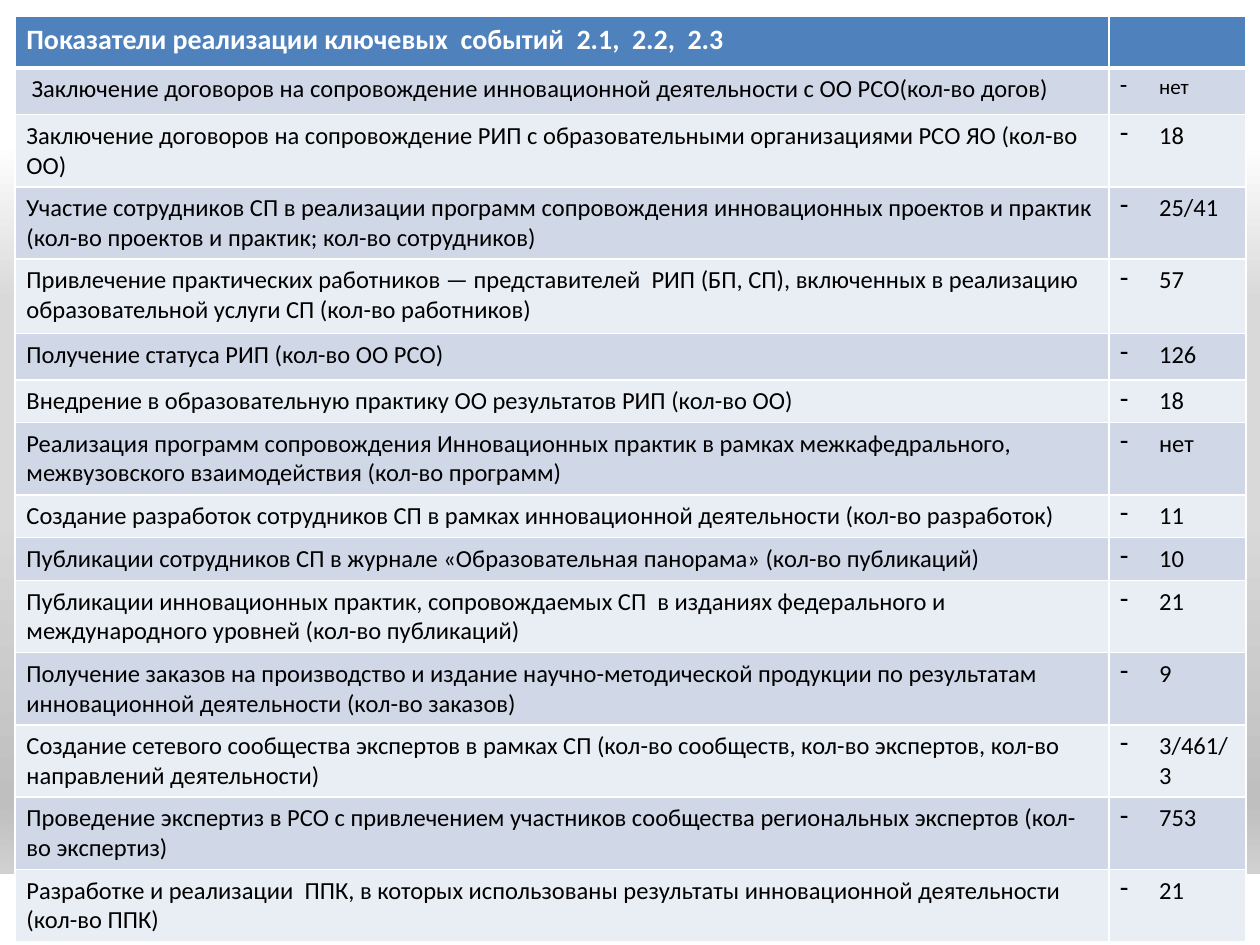
from pptx import Presentation
from pptx.dml.color import RGBColor
from pptx.enum.shapes import MSO_SHAPE
from pptx.oxml.ns import qn
from pptx.util import Inches, Pt
from lxml.etree import SubElement

WIDTH, HEIGHT = Inches(10), Inches(7.5)
COLUMN_WIDTHS = [8.68, 1.09]
HEADER_HEIGHT = 0.41
BAND_FILLS = ["D0D8E8", "E9EDF4"]
HEADING = "Показатели реализации ключевых  событий  2.1,  2.2,  2.3"
BACKDROP = [(0, "FFFFFF"), (15, "FFFFFF"), (32, "D9D9D9"),
            (54, "D9D9D9"), (85, "BFBFBF"), (100, "E6E6E6")]
INDICATORS = [
    (0.37, "Заключение договоров на сопровождение инновационной деятельности с ОО РСО(кол-во догов)", "нет"),
    (0.56, "Заключение договоров на сопровождение РИП с образовательными организациями РСО ЯО (кол-во ОО)", "18"),
    (0.56, "Участие сотрудников СП в реализации программ сопровождения инновационных проектов и практик "
           "(кол-во проектов и практик; кол-во сотрудников)", "25/41"),
    (0.59, "Привлечение практических работников — представителей  РИП (БП, СП), включенных в реализацию "
           "образовательной услуги СП (кол-во работников)", "57"),
    (0.37, "Получение статуса РИП (кол-во ОО РСО)", "126"),
    (0.33, "Внедрение в образовательную практику ОО результатов РИП (кол-во ОО)", "18"),
    (0.56, "Реализация программ сопровождения Инновационных практик в рамках межкафедрального, "
           "межвузовского взаимодействия (кол-во программ)", "нет"),
    (0.34, "Создание разработок сотрудников СП в рамках инновационной деятельности (кол-во разработок)", "11"),
    (0.34, "Публикации сотрудников СП в журнале «Образовательная панорама» (кол-во публикаций)", "10"),
    (0.56, "Публикации инновационных практик, сопровождаемых СП  в изданиях федерального и "
           "международного уровней (кол-во публикаций)", "21"),
    (0.56, "Получение заказов на производство и издание научно-методической продукции по результатам "
           "инновационной деятельности (кол-во заказов)", "9"),
    (0.56, "Создание сетевого сообщества экспертов в рамках СП (кол-во сообществ, кол-во экспертов, "
           "кол-во направлений деятельности)", "3/461/3"),
    (0.56, "Проведение экспертиз в РСО с привлечением участников сообщества региональных экспертов "
           "(кол-во экспертиз)", "753"),
    (0.56, "Разработке и реализации  ППК, в которых использованы результаты инновационной деятельности "
           "(кол-во ППК)", "21"),
]


def color(value):
    return RGBColor.from_string(value)


def add_solid(parent, value):
    solid = SubElement(parent, qn("a:solidFill"))
    SubElement(solid, qn("a:srgbClr"), val=value)


def paint_backdrop(slide):
    fill = slide.background.fill
    fill.gradient()
    fill.gradient_angle = 270
    stops = slide.element.find(".//" + qn("a:gsLst"))
    for stop in list(stops):
        stops.remove(stop)
    for percent, value in BACKDROP:
        stop = SubElement(stops, qn("a:gs"), pos=str(percent * 1000))
        SubElement(stop, qn("a:srgbClr"), val=value)


def add_footer_band(slide):
    top = int(HEIGHT * 0.925)
    band = slide.shapes.add_shape(MSO_SHAPE.RECTANGLE, 0, top, WIDTH, HEIGHT - top)
    band.shadow.inherit = False
    band.fill.solid()
    band.fill.fore_color.rgb = color("FFFFFF")
    band.line.fill.background()


def style_cell(cell, fill, bottom_width=1):
    properties = cell._tc.get_or_add_tcPr()
    for side, width in zip("LRTB", (1, 1, 1, bottom_width)):
        border = SubElement(properties, qn(f"a:ln{side}"), w=str(Pt(width)))
        add_solid(border, "FFFFFF")
    cell.fill.solid()
    cell.fill.fore_color.rgb = color(fill)
    cell.margin_left = cell.margin_right = Inches(0.09)


def write(cell, text, size, ink="000000", bold=False):
    paragraph = cell.text_frame.paragraphs[0]
    paragraph.text = text
    font = paragraph.runs[0].font
    font.name, font.size, font.bold = "Calibri", Pt(size), bold
    font.color.rgb = color(ink)
    return paragraph


def indent(paragraph, left, first=0):
    properties = paragraph._p.get_or_add_pPr()
    properties.set("marL", str(Inches(left)))
    properties.set("indent", str(Inches(first)))
    return properties


def add_indicator_table(slide):
    heights = [HEADER_HEIGHT] + [height for height, _, _ in INDICATORS]
    table = slide.shapes.add_table(
        len(heights), len(COLUMN_WIDTHS), Inches(0.12), Inches(0.13),
        Inches(sum(COLUMN_WIDTHS)), Inches(sum(heights))).table
    for column, width in zip(table.columns, COLUMN_WIDTHS):
        column.width = Inches(width)
    for row, height in zip(table.rows, heights):
        row.height = Inches(height)

    for heading_cell in table.rows[0].cells:
        style_cell(heading_cell, "4F81BD", bottom_width=3)
    write(table.cell(0, 0), HEADING, 16, "FFFFFF", bold=True)

    for number, (_, indicator, result) in enumerate(INDICATORS, start=1):
        indicator_cell, result_cell = table.rows[number].cells
        for cell in (indicator_cell, result_cell):
            style_cell(cell, BAND_FILLS[(number - 1) % 2])
        description = write(indicator_cell, indicator, 14)
        if number == 1:
            indent(description, 0.04)
        elif number > 3:
            description.space_after = Pt(10)
        outcome = write(result_cell, result, 12 if number == 1 else 14)
        SubElement(indent(outcome, 0.31, -0.31), qn("a:buChar"), char="-")


def main():
    presentation = Presentation()
    presentation.slide_width, presentation.slide_height = WIDTH, HEIGHT
    slide = presentation.slides.add_slide(presentation.slide_layouts[6])
    paint_backdrop(slide)
    add_footer_band(slide)
    add_indicator_table(slide)
    presentation.save("out.pptx")


if __name__ == "__main__":
    main()
